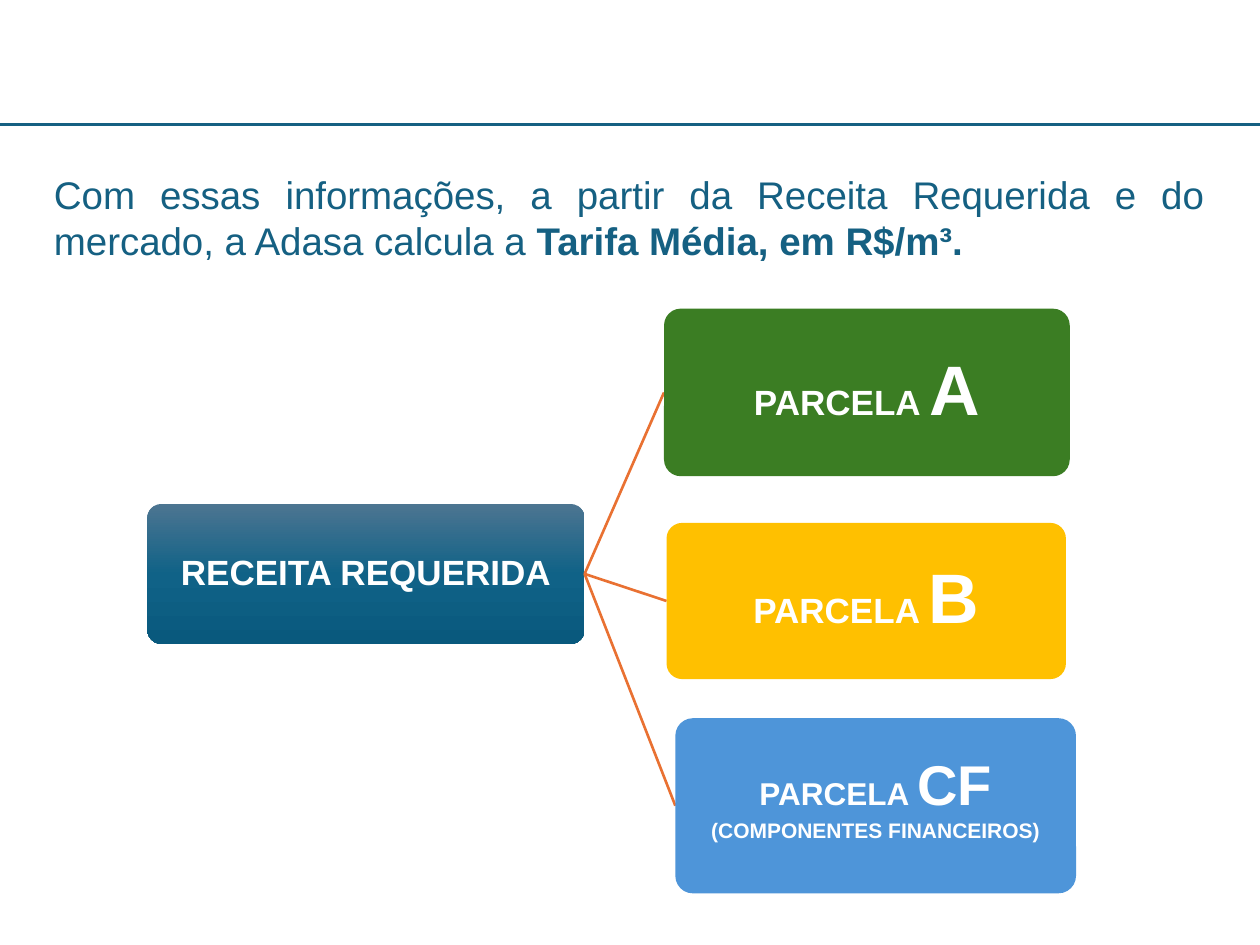
import copy

import pptx
import pptx.dml.color
import pptx.enum.shapes
import pptx.enum.text
import pptx.oxml
import pptx.oxml.ns
import pptx.util

HUES = {
    "blue": "156082", "white": "FFFFFF", "wire": "E97132",
    "green": "3B7D23", "gold": "FFC000", "sky": "4E95D9",
    "top": "4C7591", "mid": "106287", "low": "09597D",
}
WIDE, HIGH = pptx.util.Inches(10), pptx.util.Inches(7.5)
COLS, ROWS = 100, 75
ALIGN = pptx.enum.text.PP_ALIGN
FRAME = {
    "word_wrap": True,
    "vertical_anchor": pptx.enum.text.MSO_ANCHOR.MIDDLE,
    **{f"margin_{side}": pptx.util.Inches(0.05)
       for side in ("left", "right", "top", "bottom")},
}


def tint(name):
    return pptx.dml.color.RGBColor.from_string(HUES[name])


def grid(*cells):
    """Turn column and row counts, in turn, into lengths."""
    return [round(n * (HIGH / ROWS if i % 2 else WIDE / COLS))
            for i, n in enumerate(cells)]


def style(item, form):
    for name, value in form.items():
        setattr(item, name, value)


def write(para, runs, hue, form):
    """Add (text, size, bold) runs to a paragraph."""
    style(para, form)
    for text, size, bold in runs:
        run = para.add_run()
        run.text = text
        style(run.font, {"name": "Arial", "size": pptx.util.Pt(size),
                         "bold": bold})
        run.font.color.rgb = tint(hue)


def wire(slide, start, end, hue, width):
    line = slide.shapes.add_connector(
        pptx.enum.shapes.MSO_CONNECTOR.STRAIGHT, *grid(*start, *end))
    line.line.color.rgb = tint(hue)
    line.line.width = pptx.util.Pt(width)
    line._element.spPr.append(pptx.oxml.parse_xml(
        f"<a:effectLst {pptx.oxml.ns.nsdecls('a')}/>"))


def shade(fill, shape, hues):
    """Fill from top to bottom with three evenly spaced hues."""
    fill.gradient()
    fill.gradient_angle = 270
    stops = shape._element.spPr.find(".//" + pptx.oxml.ns.qn("a:gsLst"))
    stops.append(copy.deepcopy(stops[-1]))
    for i, (stop, hue) in enumerate(zip(fill.gradient_stops, hues)):
        stop.position = i / 2
        stop.color.rgb = tint(hue)


def card(slide, box, hues, lines):
    shape = slide.shapes.add_shape(
        pptx.enum.shapes.MSO_SHAPE.ROUNDED_RECTANGLE, *grid(*box))
    shape.adjustments[0] = 0.1
    shape.shadow.inherit = False
    shape.line.fill.background()
    if len(hues) > 1:
        shade(shape.fill, shape, hues)
    else:
        shape.fill.solid()
        shape.fill.fore_color.rgb = tint(hues[0])
    frame = shape.text_frame
    style(frame, FRAME)
    for i, runs in enumerate(lines):
        para = frame.add_paragraph() if i else frame.paragraphs[0]
        form = {"alignment": ALIGN.CENTER, "line_spacing": 0.9}
        if i < len(lines) - 1:
            form["space_after"] = pptx.util.Pt(2)
        write(para, runs, "white", form)
    return shape


def intro(slide, box):
    frame = slide.shapes.add_textbox(*grid(*box)).text_frame
    style(frame, {"word_wrap": True,
                  "auto_size": pptx.enum.text.MSO_AUTO_SIZE.SHAPE_TO_FIT_TEXT})
    write(frame.paragraphs[0], [
        ("Com essas informações, a partir da Receita Requerida e do "
         "mercado, a Adasa calcula a ", 22, False),
        ("Tarifa Média, em R$/m³.", 22, True),
    ], "blue", {"alignment": ALIGN.JUSTIFY})


def tree(slide, box):
    """Draw the root card, centred on the left, and its three parts."""
    left, top, wide, high = box
    root_w, root_h = 34.7, 11.1
    root_y = top + 15.5
    hub = (left + root_w, root_y + root_h / 2)
    parts = [
        ((41, 0, 32.2, 13.3), "green",
         [[("PARCELA ", 20, True), ("A", 40, True)]]),
        ((41.2, 17, 31.7, 12.4), "gold",
         [[("PARCELA ", 20, True), ("B", 40, True)]]),
        ((41.9, 32.5, 31.8, 13.9), "sky",
         [[("PARCELA", 18, True), (" ", 16, True), ("CF", 32, True)],
          [("(COMPONENTES FINANCEIROS)", 12, True)]]),
    ]
    card(slide, (left, root_y, root_w, root_h), ("top", "mid", "low"),
         [[("RECEITA REQUERIDA", 20, True)]])
    for (x, y, w, h), hue, lines in parts:
        wire(slide, hub, (left + x, top + y + h / 2), "wire", 1.5)
        shape = card(slide, (left + x, top + y, w, h), (hue,), lines)
        if len(lines) > 1:
            shape.text_frame.margin_bottom = pptx.util.Inches(0.14)


def main():
    deck = pptx.Presentation()
    style(deck, {"slide_width": WIDE, "slide_height": HIGH})
    slide = deck.slides.add_slide(deck.slide_layouts[6])
    wire(slide, (0, 9.9), (COLS, 9.9), "blue", 2)
    intro(slide, (3.3, 13.1, 93.3, 8.4))
    tree(slide, (11.7, 24.5, 73.7, 46.4))
    deck.save("out.pptx")


if __name__ == "__main__":
    main()
